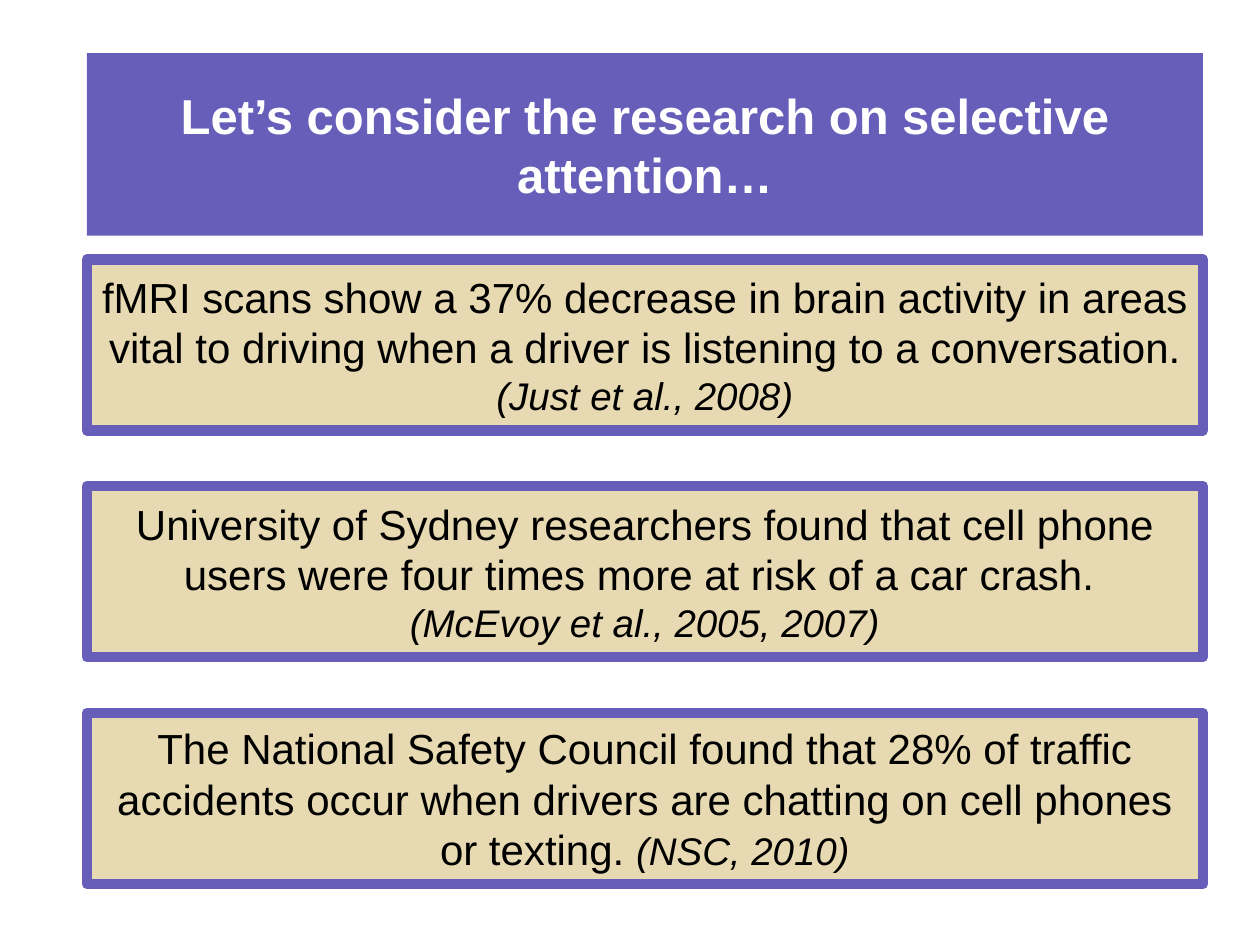
from pptx import Presentation
from pptx.dml.color import RGBColor
from pptx.enum import shapes, text
from pptx.util import Cm, Pt

PURPLE = RGBColor(0x66, 0x5E, 0xB8)
SAND = RGBColor(0xE7, 0xD9, 0xB1)
WHITE = RGBColor(0xFF, 0xFF, 0xFF)
BLACK = RGBColor(0, 0, 0)
FONT = "Arial"

TITLE = "Let’s consider the research on selective attention…"
FINDINGS = [
    [[("fMRI scans show a 37% decrease in brain activity in areas vital to "
       "driving when a driver is listening to a conversation. ", False),
      ("(Just et al., 2008)", True)]],
    [[("University of Sydney researchers found that cell phone users were "
       "four times more at risk of a car crash. ", False)],
     [("(McEvoy et al., 2005, 2007)", True)]],
    [[("The National Safety Council found that 28% of traffic accidents occur "
       "when drivers are chatting on cell phones or texting. ", False),
      ("(NSC, 2010)", True)]],
]

LEFT, WIDTH = Cm(1.75), Cm(22.5)
TITLE_TOP, TITLE_HEIGHT = Cm(1.07), Cm(3.68)
FINDING_TOP, FINDING_HEIGHT, FINDING_STEP = Cm(5.23), Cm(3.45), Cm(4.57)


def add_box(slide, top, height, fill):
    shape = slide.shapes.add_shape(
        shapes.MSO_SHAPE.RECTANGLE, LEFT, top, WIDTH, height)
    shape.shadow.inherit = False
    shape.fill.solid()
    shape.fill.fore_color.rgb = fill
    shape.text_frame.word_wrap = True
    shape.text_frame.vertical_anchor = text.MSO_ANCHOR.MIDDLE
    return shape


def format_run(run, size, color, bold=False, italic=False):
    run.font.name = FONT
    run.font.size = Pt(size)
    run.font.color.rgb = color
    run.font.bold = bold
    run.font.italic = italic


def add_title(slide):
    shape = add_box(slide, TITLE_TOP, TITLE_HEIGHT, PURPLE)
    shape.line.fill.background()
    shape.text_frame.text = TITLE
    paragraph = shape.text_frame.paragraphs[0]
    paragraph.alignment = text.PP_ALIGN.CENTER
    format_run(paragraph.runs[0], 28, WHITE, bold=True)


def add_finding(slide, top, paragraphs):
    shape = add_box(slide, top, FINDING_HEIGHT, SAND)
    shape.line.color.rgb = PURPLE
    shape.line.width = Pt(6)
    frame = shape.text_frame
    for index, pieces in enumerate(paragraphs):
        paragraph = frame.add_paragraph() if index else frame.paragraphs[0]
        paragraph.alignment = text.PP_ALIGN.CENTER
        for words, is_citation in pieces:
            run = paragraph.add_run()
            run.text = words
            format_run(run, 22 if is_citation else 24, BLACK, italic=is_citation)


def main():
    presentation = Presentation()
    presentation.slide_width, presentation.slide_height = Cm(25.4), Cm(19.05)
    slide = presentation.slides.add_slide(presentation.slide_layouts[6])
    add_title(slide)
    for index, paragraphs in enumerate(FINDINGS):
        add_finding(slide, FINDING_TOP + index * FINDING_STEP, paragraphs)
    presentation.save("out.pptx")


if __name__ == "__main__":
    main()
